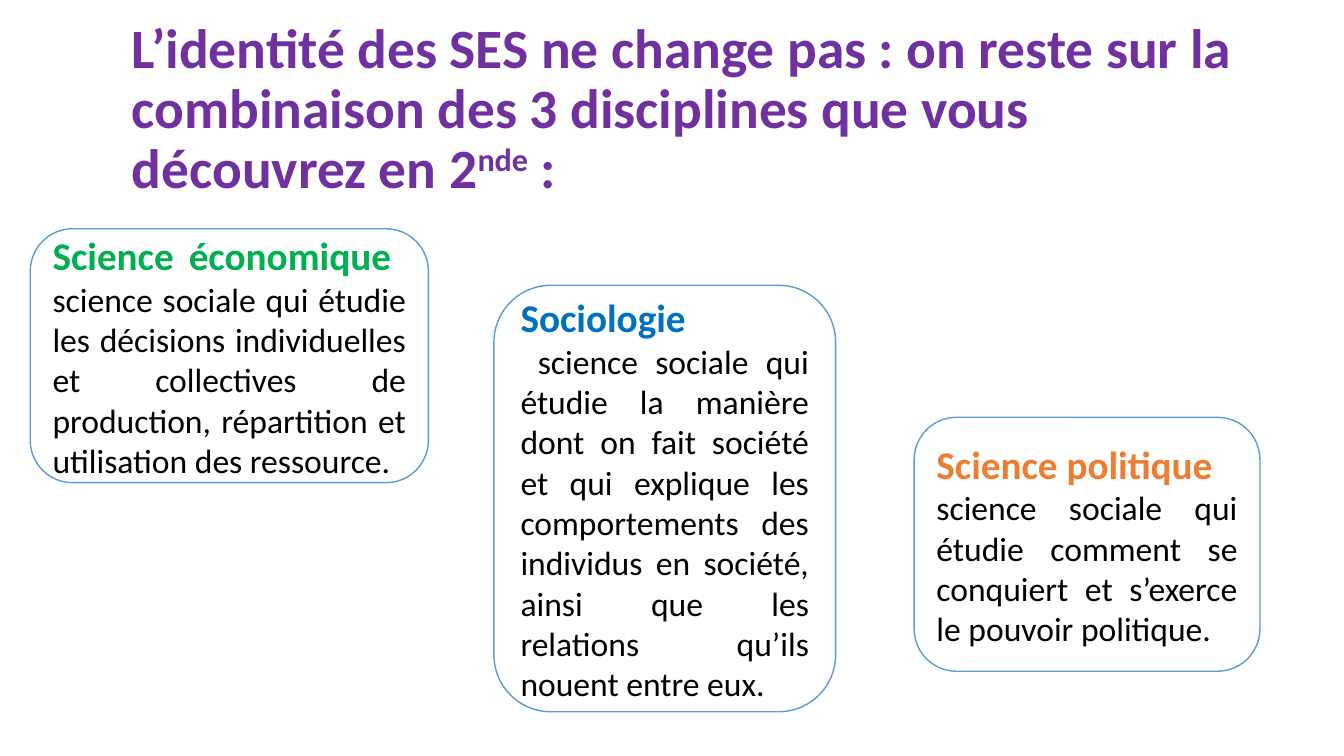
from dataclasses import dataclass

from pptx import Presentation
from pptx.dml.color import RGBColor
from pptx.enum.shapes import MSO_SHAPE
from pptx.enum.text import MSO_ANCHOR, PP_ALIGN
from pptx.util import Pt

ROUND = MSO_SHAPE.ROUNDED_RECTANGLE
MIDDLE = MSO_ANCHOR.MIDDLE
JUSTIFY = PP_ALIGN.JUSTIFY

FONT = "Calibri"
PURPLE, GREEN, BLUE, ORANGE = "7030A0", "00B050", "0070C0", "ED7D31"
BLACK, WHITE, EDGE = "000000", "FFFFFF", "5B9BD5"


@dataclass
class Card:
    left: float
    top: float
    width: float
    height: float
    color: str
    head: str
    body: str
    joined: bool = False  # heading and body share one paragraph


CARDS = [
    Card(21.6, 163.4, 284.4, 181.4, GREEN, "Science économique ",
         " science sociale qui étudie les décisions individuelles et collectives "
         "de production, répartition et utilisation des ressource.", joined=True),
    Card(352.8, 203.8, 244.1, 304.6, BLUE, "Sociologie",
         " science sociale qui étudie la manière dont on fait société et qui "
         "explique les comportements des individus en société, ainsi que les "
         "relations qu’ils nouent entre eux."),
    Card(653, 298.1, 247, 181.4, ORANGE, "Science politique",
         "science sociale qui étudie comment se conquiert et s’exerce le pouvoir "
         "politique."),
]


def rgb(code: str) -> RGBColor:
    return RGBColor.from_string(code)


def style(run, size: float, color: str, bold: bool) -> None:
    font = run.font
    font.name, font.size, font.bold = FONT, Pt(size), bold
    font.color.rgb = rgb(color)


def add_title(slide) -> None:
    box = slide.shapes.add_textbox(Pt(87.1), Pt(26.6), Pt(828), Pt(104.4))
    frame = box.text_frame
    frame.word_wrap = True
    frame.vertical_anchor = MIDDLE
    para = frame.paragraphs[0]
    para.line_spacing = 0.9
    para.text = ("L’identité des SES ne change pas : on reste sur la combinaison "
                 "des 3 disciplines que vous découvrez en 2")
    for text in ("nde", " :"):
        para.add_run().text = text
    for run in para.runs:
        style(run, 39.6, PURPLE, True)
    # Raise the ordinal ending
    para.runs[1].font._element.set("baseline", "30000")


def add_card(slide, card: Card) -> None:
    shape = slide.shapes.add_shape(ROUND, Pt(card.left), Pt(card.top),
                                   Pt(card.width), Pt(card.height))
    shape.shadow.inherit = False
    shape.fill.solid()
    shape.fill.fore_color.rgb = rgb(WHITE)
    shape.line.color.rgb = rgb(EDGE)
    shape.line.width = Pt(1)

    frame = shape.text_frame
    frame.word_wrap = True
    frame.vertical_anchor = MIDDLE
    first = frame.paragraphs[0]
    first.text = card.head
    style(first.runs[0], 28, card.color, True)
    last = first if card.joined else frame.add_paragraph()
    run = last.add_run()
    run.text = card.body
    style(run, 24, BLACK, False)
    for para in frame.paragraphs:
        para.alignment = JUSTIFY


def main() -> None:
    deck = Presentation()
    deck.slide_width, deck.slide_height = Pt(960), Pt(540)
    slide = deck.slides.add_slide(deck.slide_layouts[6])
    add_title(slide)
    for card in CARDS:
        add_card(slide, card)
    deck.save("out.pptx")


if __name__ == "__main__":
    main()
